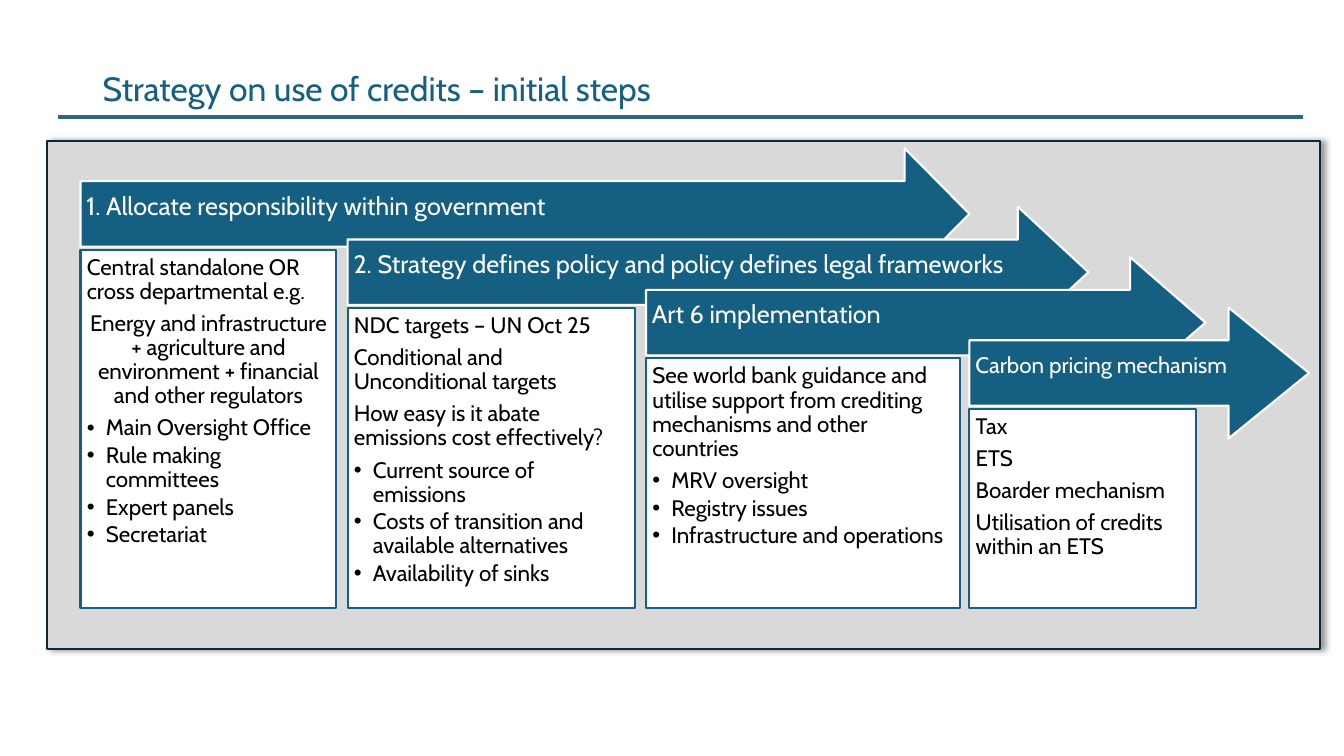
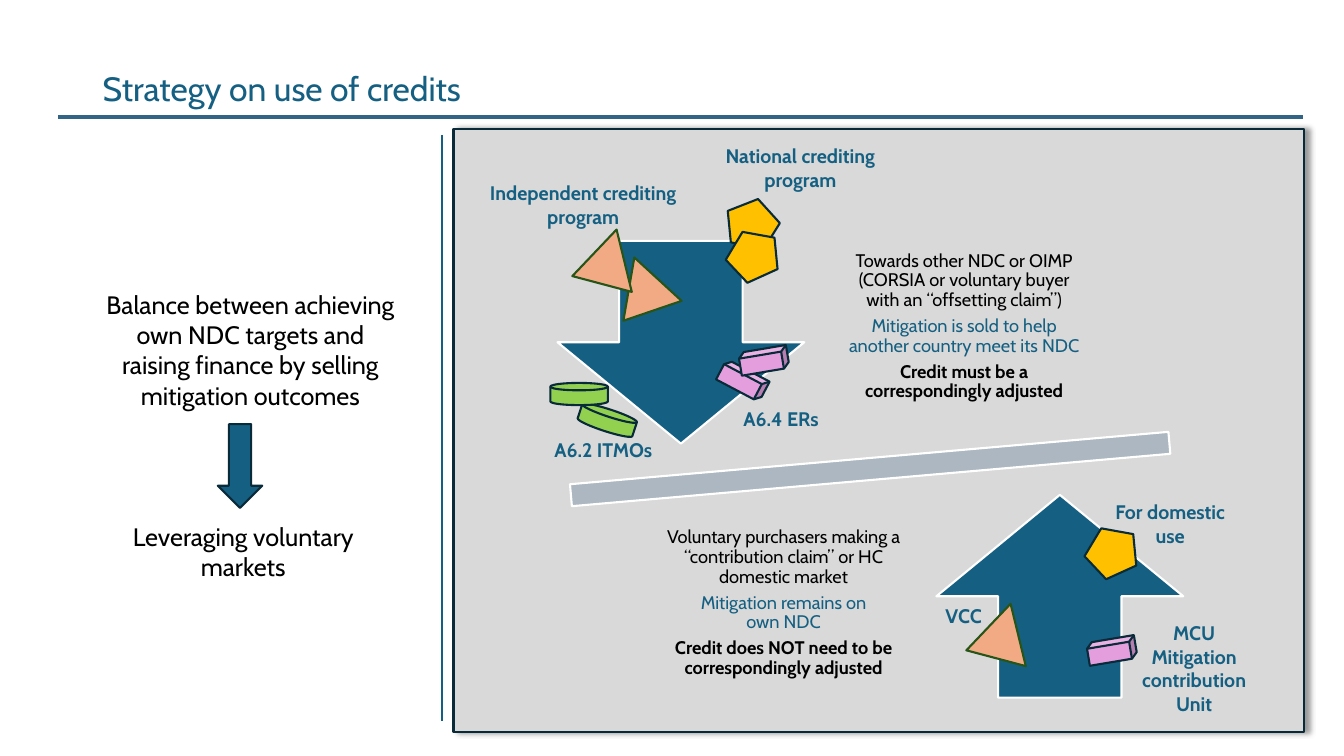
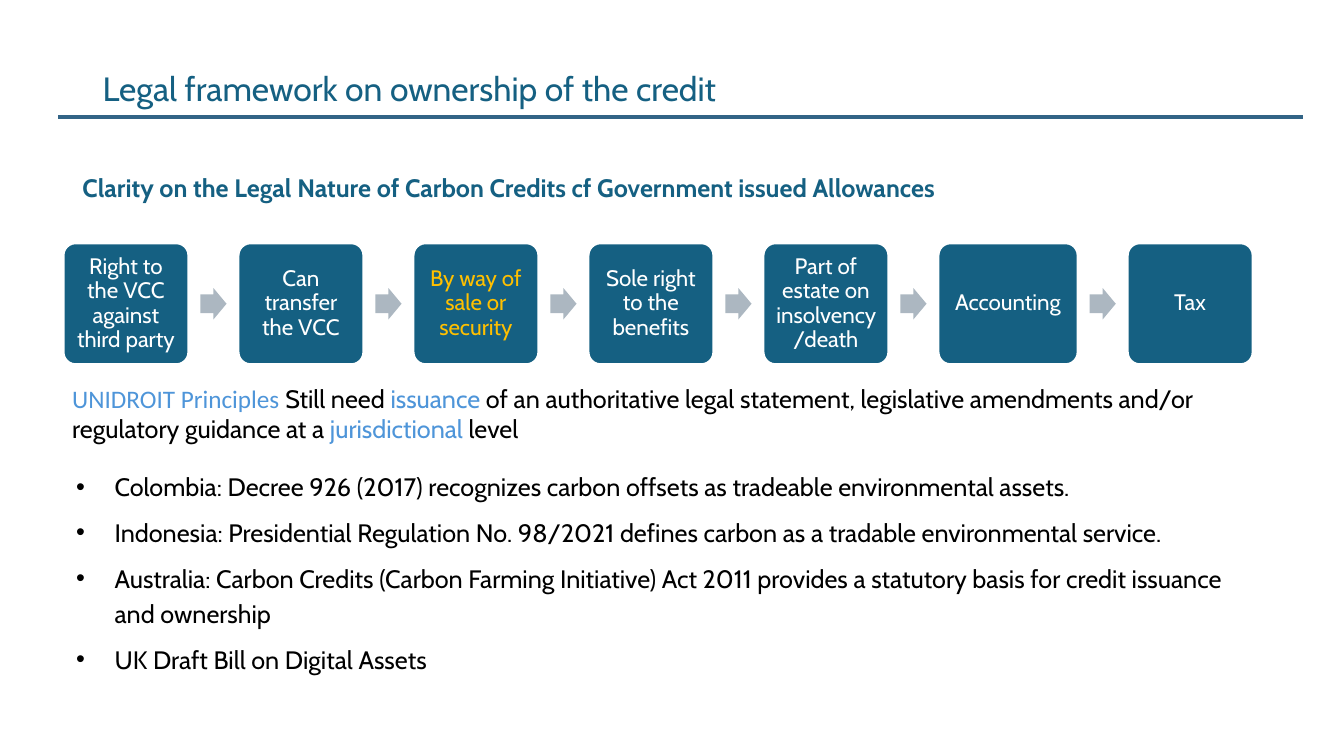
from dataclasses import dataclass, replace

from lxml import etree
from pptx import Presentation
from pptx.dml.color import RGBColor
from pptx.enum.shapes import MSO_CONNECTOR, MSO_SHAPE
from pptx.enum.text import MSO_ANCHOR, PP_ALIGN
from pptx.oxml.ns import qn
from pptx.util import Cm, Pt

RECTANGLE, ROUNDED = MSO_SHAPE.RECTANGLE, MSO_SHAPE.ROUNDED_RECTANGLE
RIGHT_ARROW, DOWN_ARROW, UP_ARROW = MSO_SHAPE.RIGHT_ARROW, MSO_SHAPE.DOWN_ARROW, MSO_SHAPE.UP_ARROW
MINUS, DISK, CUBE = MSO_SHAPE.MATH_MINUS, MSO_SHAPE.FLOWCHART_MAGNETIC_DISK, MSO_SHAPE.CUBE
TRIANGLE, PENTAGON = MSO_SHAPE.ISOSCELES_TRIANGLE, MSO_SHAPE.REGULAR_PENTAGON
STRAIGHT = MSO_CONNECTOR.STRAIGHT
TOP, MIDDLE = MSO_ANCHOR.TOP, MSO_ANCHOR.MIDDLE
LEFT, CENTER = PP_ALIGN.LEFT, PP_ALIGN.CENTER


@dataclass(frozen=True)
class Theme:
    """Colours, fonts and type sizes of the deck."""

    teal: str = "156082"
    rule: str = "326486"
    ink: str = "092A39"
    panel: str = "D9D9D9"
    grey: str = "ACB7C1"
    white: str = "FFFFFF"
    black: str = "000000"
    gold: str = "FFC000"
    green: str = "92D050"
    pink: str = "E59EDD"
    peach: str = "F2AA84"
    moss: str = "275417"
    sky: str = "4E95D9"
    font: str = "Cabin"
    second_font: str = "Calibri"
    title_size: int = 24
    lead_size: int = 18
    body_size: int = 16
    label_size: int = 14
    note_size: int = 13
    outline: float = 1.5
    rule_width: float = 3


THEME = Theme()


@dataclass(frozen=True)
class Style:
    """Look of a paragraph and its spans; spacing in points, indent in cm."""

    size: float = THEME.body_size
    color: str = THEME.black
    bold: bool = False
    font: str = THEME.font
    align: int = LEFT
    line: float = 1.0
    before: float = 0
    after: float = 0
    indent: float = 0


@dataclass(frozen=True)
class Box:
    """A rectangle in centimetres."""

    left: float
    top: float
    width: float
    height: float

    def inside(self, left, top, width, height):
        """Return a box placed relative to this one."""
        return Box(self.left + left, self.top + top, width, height)

    def lengths(self):
        """Return the four lengths for python-pptx."""
        return [Cm(value) for value in (self.left, self.top, self.width, self.height)]


TITLE = Style(THEME.title_size, THEME.teal, line=0.9)
BODY = Style(line=0.9, after=5.6)
BODY_CENTER = replace(BODY, align=CENTER)
BULLET = replace(BODY, after=2.4, indent=0.48)
STEP = replace(BODY, size=THEME.lead_size, color=THEME.white)
SMALL_STEP = replace(STEP, size=THEME.body_size)
NOTE = Style(THEME.note_size, align=CENTER, line=0.9, after=4.55)
NOTE_TEAL = replace(NOTE, color=THEME.teal)
NOTE_BOLD = replace(NOTE, bold=True)
LABEL = Style(THEME.label_size, THEME.teal, bold=True, align=CENTER)
LEAD = Style(THEME.lead_size)
LEAD_CENTER = replace(LEAD, align=CENTER)
LEAD_SKY = replace(LEAD, color=THEME.sky)
LEAD_SECOND = replace(LEAD_SKY, font=THEME.second_font)
HEADING = Style(THEME.lead_size, THEME.teal, bold=True, line=0.9, before=10)
CASE = replace(LEAD, line=1.15, after=8, indent=0.97)
TILE = replace(BODY_CENTER, color=THEME.white)
TILE_GOLD = replace(TILE, color=THEME.gold)

TEXT_INSETS = (0.25, 0.13, 0.25, 0.13)


def apply(target, formats):
    """Set each attribute named in a dict of format values."""
    for name, value in formats.items():
        setattr(target, name, value)


def add_bullet(para, indent):
    """Give a paragraph a round bullet with a hanging indent."""
    properties = para._p.get_or_add_pPr()
    properties.set("marL", str(Cm(indent)))
    properties.set("indent", str(-Cm(indent)))
    etree.SubElement(properties, qn("a:buFont")).set("typeface", "Arial")
    etree.SubElement(properties, qn("a:buChar")).set("char", "•")


def add_span(para, text, style):
    """Add text to a paragraph, turning newlines into line breaks."""
    for number, line in enumerate(text.split("\n")):
        if number:
            para.add_line_break()
        span = para.add_run()
        span.text = line
        apply(span.font, {"size": Pt(style.size), "bold": style.bold, "name": style.font})
        span.font.color.rgb = RGBColor.from_string(style.color)


def write(shape, paras, insets=TEXT_INSETS, anchor=TOP):
    """Fill a shape with (style, text or list of spans) paragraphs."""
    frame = shape.text_frame
    left, top, right, bottom = map(Cm, insets)
    apply(frame, {"word_wrap": True, "vertical_anchor": anchor, "margin_left": left,
                  "margin_top": top, "margin_right": right, "margin_bottom": bottom})
    for number, (style, content) in enumerate(paras):
        para = frame.add_paragraph() if number else frame.paragraphs[0]
        apply(para, {"alignment": style.align, "line_spacing": style.line,
                     "space_before": Pt(style.before), "space_after": Pt(style.after)})
        if style.indent:
            add_bullet(para, style.indent)
        spans = [(style, content)] if isinstance(content, str) else content
        for span_style, text in spans:
            add_span(para, text, span_style)


def add_text(page, box, paras, **options):
    """Add a wrapped text box."""
    write(page.shapes.add_textbox(*box.lengths()), paras, **options)


def add_figure(page, kind, box, fill, line=None, turn=0, adjust=()):
    """Add a flat preset shape."""
    shape = page.shapes.add_shape(kind, *box.lengths())
    shape.shadow.inherit = False
    shape.rotation = turn
    shape.fill.solid()
    shape.fill.fore_color.rgb = RGBColor.from_string(fill)
    if line:
        shape.line.color.rgb = RGBColor.from_string(line)
        shape.line.width = Pt(THEME.outline)
    else:
        shape.line.fill.background()
    for number, value in enumerate(adjust):
        shape.adjustments[number] = value
    return shape


def add_rule(page, start, end, color, width):
    """Add a straight line between two points."""
    rule = page.shapes.add_connector(STRAIGHT, *map(Cm, start + end))
    rule.line.color.rgb = RGBColor.from_string(color)
    rule.line.width = Pt(width)
    etree.SubElement(rule._element.spPr, qn("a:effectLst"))


def add_panel(page, box):
    """Add the grey panel with a soft shadow to its right."""
    panel = add_figure(page, RECTANGLE, box, THEME.panel, THEME.ink)
    effects = panel._element.spPr.find(qn("a:effectLst"))
    shadow = etree.SubElement(effects, qn("a:outerShdw"), blurRad=str(Pt(4)), dist=str(Pt(3)),
                              dir="0", algn="l", rotWithShape="0")
    color = etree.SubElement(shadow, qn("a:srgbClr"), val=THEME.black)
    etree.SubElement(color, qn("a:alpha"), val="40000")


def add_page(deck, title):
    """Add a blank page with the title and its rule."""
    page = deck.slides.add_slide(deck.slide_layouts[6])
    add_text(page, Box(2.34, 1.02, 29.21, 2.51), [(TITLE, title)], anchor=MIDDLE)
    add_rule(page, (1.47, 2.95), (32.84, 2.95), THEME.rule, THEME.rule_width)
    return page


def add_step(page, box, head, body_width, heading, paras):
    """Add an arrow along the top of a box and the text card below it."""
    arrow_height, card_top = 3.3, 2.55
    arrow = add_figure(page, RIGHT_ARROW, box.inside(0, 0, box.width, arrow_height),
                       THEME.teal, THEME.white, adjust=(0.5, head / arrow_height))
    write(arrow, [heading], (0.15, 0.15, 0.6, 0.5), MIDDLE)
    card = add_figure(page, RECTANGLE, box.inside(0, card_top, body_width, box.height - card_top),
                      THEME.white, THEME.teal)
    write(card, paras, (0.16,) * 4)


def add_staircase(page, box):
    """Add the panel with four overlapping steps."""
    add_panel(page, box)
    floor = 11.76
    steps = [
        (0.84, 0.18, 22.4, 1.63, 6.45, (STEP, "1. Allocate responsibility within government"), [
            (BODY, "Central standalone OR cross departmental e.g."),
            (BODY_CENTER, "Energy and infrastructure + agriculture and environment + financial "
                          "and other regulators"),
            (BULLET, "Main Oversight Office"),
            (BULLET, "Rule making committees"),
            (BULLET, "Expert panels"),
            (BULLET, "Secretariat")]),
        (7.57, 1.65, 18.67, 1.78, 7.24,
         (STEP, "2. Strategy defines policy and policy defines legal frameworks"), [
             (BODY, "NDC targets – UN Oct 25"),
             (BODY, "Conditional and Unconditional targets"),
             (BODY, "How easy is it abate emissions cost effectively?"),
             (BULLET, "Current source of emissions"),
             (BULLET, "Costs of transition and available alternatives"),
             (BULLET, "Availability of sinks")]),
        (15.09, 2.92, 14.1, 1.9, 7.92, (STEP, "Art 6 implementation"), [
            (BODY, "See world bank guidance and utilise support from crediting mechanisms "
                   "and other countries"),
            (BULLET, "MRV oversight"),
            (BULLET, "Registry issues"),
            (BULLET, "Infrastructure and operations")]),
        (23.24, 4.19, 8.56, 2.03, 5.72, (SMALL_STEP, "Carbon pricing mechanism"), [
            (BODY, "Tax"),
            (BODY, "ETS"),
            (BODY, "Boarder mechanism"),
            (BODY, "Utilisation of credits within an ETS")]),
    ]
    for left, top, width, *content in steps:
        add_step(page, box.inside(left, top, width, floor - top), *content)


def add_balance(page, box):
    """Add the panel that weighs sold credits against domestic ones."""
    add_panel(page, box)
    add_figure(page, MINUS, box.inside(0.2, 7.39, 20.6, 2.36), THEME.grey, THEME.white, 355)
    for kind, left, top in [(DOWN_ARROW, 2.62, 2.82), (UP_ARROW, 12.17, 9.22)]:
        add_figure(page, kind, box.inside(left, top, 6.22, 5.11), THEME.teal, THEME.white)

    notes = [
        (9.55, 2.29, 5.38,
         "Towards other NDC or OIMP (CORSIA or voluntary buyer with an “offsetting claim”)",
         "Mitigation is sold to help another country meet its NDC",
         "Credit must be a correspondingly adjusted"),
        (5, 9.6, 4.7,
         "Voluntary purchasers making a “contribution claim” or HC domestic market",
         "Mitigation remains on\nown NDC",
         "Credit does NOT need to be correspondingly adjusted"),
    ]
    for left, top, height, *texts in notes:
        add_text(page, box.inside(left, top, 6.63, height),
                 list(zip((NOTE, NOTE_TEAL, NOTE_BOLD), texts)), insets=(0.25,) * 4, anchor=MIDDLE)

    looks = {
        DISK: (1.45, 0.56, THEME.green, THEME.ink),
        CUBE: (1.22, 0.58, THEME.pink, THEME.ink),
        TRIANGLE: (1.55, 1.42, THEME.peach, THEME.moss),
        PENTAGON: (1.35, 1.22, THEME.gold, THEME.ink),
    }
    credits = [
        (DISK, 3.15, 7.06, 18.1), (CUBE, 6.68, 6.05, 27.8), (TRIANGLE, 4.01, 3.2, 341.2),
        (DISK, 2.44, 6.4, 0), (CUBE, 7.21, 5.54, 350.5), (TRIANGLE, 3.15, 2.51, 14.9),
        (PENTAGON, 6.86, 1.75, 13.2), (PENTAGON, 6.86, 2.54, 335.6),
        (CUBE, 15.98, 12.85, 350.5), (TRIANGLE, 13.08, 11.94, 14.9),
        (PENTAGON, 15.9, 10.01, 335.6),
    ]
    for kind, left, top, turn in credits:
        width, height, fill, line = looks[kind]
        add_figure(page, kind, box.inside(left, top, width, height), fill, line, turn)

    labels = [
        (2.24, 7.65, 3.07, 0.86, ["A6.2 ITMOs"]),
        (6.91, 6.88, 2.69, 0.86, ["A6.4 ERs"]),
        (0.3, 1.19, 5.94, 1.45, ["Independent crediting program"]),
        (5.77, 0.25, 5.94, 1.45, ["National crediting program"]),
        (16.99, 12.27, 3.35, 2.64, ["MCU", "Mitigation contribution Unit"]),
        (11.18, 11.84, 3.35, 0.86, ["VCC"]),
        (16.03, 9.22, 4.06, 1.47, ["For domestic use"]),
    ]
    for *place, texts in labels:
        add_text(page, box.inside(*place), [(LABEL, text) for text in texts])


def add_aim(page, box):
    """Add the left column with its arrow and dividing line."""
    add_text(page, box.inside(0.18, 3.76, 8, 3.33),
             [(LEAD_CENTER, "Balance between achieving own NDC targets and raising finance "
                            "by selling mitigation outcomes")])
    add_text(page, box.inside(0, 9.6, 8, 1.8), [(LEAD_CENTER, "Leveraging voluntary markets")])
    add_figure(page, DOWN_ARROW, box.inside(3.36, 7.29, 1.12, 2.11), THEME.teal, THEME.ink)
    right = box.left + box.width
    add_rule(page, (right, box.top), (right, box.top + box.height), THEME.teal, THEME.outline)


def add_chain(page, box):
    """Add a row of tiles joined by small arrows."""
    tiles = [
        (TILE, "Right to the VCC against third party", 3.15),
        (TILE, "Can transfer the VCC", 3.15),
        (TILE_GOLD, "By way of sale or security", 3.15),
        (TILE, "Sole right to the benefits", 3.15),
        (TILE, "Part of estate on insolvency/death", 3.15),
        (TILE, "Accounting", 3.51),
        (TILE, "Tax", 3.15),
    ]
    gap, arrow_width, arrow_height = 1.26, 0.66, 0.79
    left = 0
    for number, (style, text, width) in enumerate(tiles):
        if number:
            add_figure(page, RIGHT_ARROW,
                       box.inside(left - (gap + arrow_width) / 2, (box.height - arrow_height) / 2,
                                  arrow_width, arrow_height),
                       THEME.grey, adjust=(0.6, 0.5))
        tile = add_figure(page, ROUNDED, box.inside(left, 0, width, box.height),
                          THEME.teal, THEME.white, adjust=(0.1,))
        write(tile, [(style, text)], (0.17,) * 4, MIDDLE)
        left += width + gap


def add_law(page, box):
    """Add the statement and the list of national examples."""
    statement = [
        (LEAD_SECOND, "UNIDROIT Principles "), (LEAD, "Still need "), (LEAD_SKY, "issuance"),
        (LEAD, " of an authoritative legal statement, legislative amendments and/or "
               "regulatory guidance at a "),
        (LEAD_SKY, "jurisdictional"), (LEAD, " level"),
    ]
    cases = [
        "Colombia: Decree 926 (2017) recognizes carbon offsets as tradeable environmental assets.",
        "Indonesia: Presidential Regulation No. 98/2021 defines carbon as a tradable "
        "environmental service.",
        "Australia: Carbon Credits (Carbon Farming Initiative) Act 2011 provides a statutory "
        "basis for credit issuance and ownership",
        "UK Draft Bill on Digital Assets",
    ]
    add_text(page, box.inside(0, 0, box.width, 1.8), [(LEAD, statement)])
    add_text(page, box.inside(0.1, 2.11, 29.49, 5.49), [(CASE, text) for text in cases])


def main():
    """Build and save the deck."""
    deck = Presentation()
    apply(deck, {"slide_width": Cm(33.87), "slide_height": Cm(19.05)})

    add_staircase(add_page(deck, "Strategy on use of credits – initial steps"),
                  Box(1.19, 3.56, 32.08, 12.8))

    page = add_page(deck, "Strategy on use of credits")
    add_aim(page, Box(2.13, 3.4, 9, 14.76))
    add_balance(page, Box(11.43, 3.25, 21.44, 15.19))

    page = add_page(deck, "Legal framework on ownership of the credit")
    add_text(page, Box(1.83, 4.29, 29.21, 1.45),
             [(HEADING, "Clarity on the Legal Nature of Carbon Credits cf Government issued "
                        "Allowances")])
    add_chain(page, Box(1.6, 6.13, 29.97, 3.05))
    add_law(page, Box(1.57, 9.52, 30, 7.6))

    deck.save("out.pptx")


if __name__ == "__main__":
    main()
